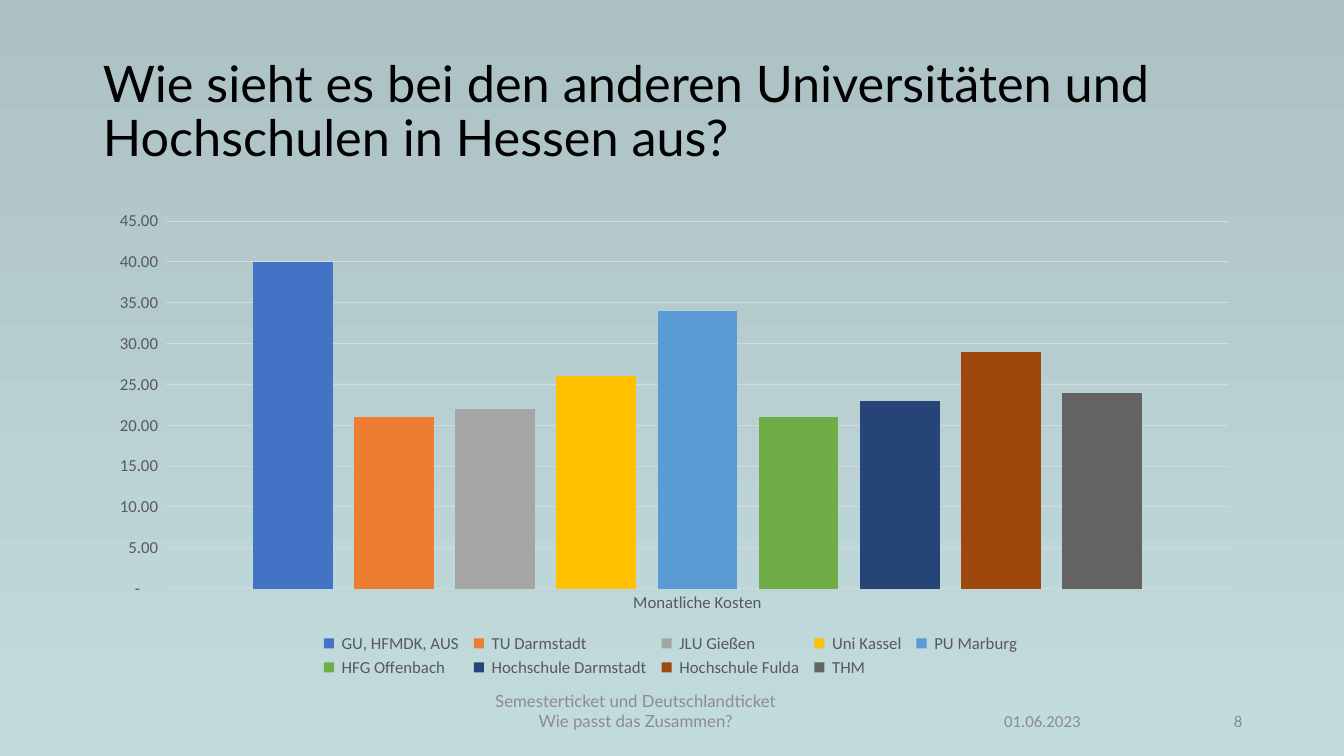
from dataclasses import dataclass

from pptx import Presentation
from pptx.chart.data import CategoryChartData
from pptx.dml.color import RGBColor as RGB
from pptx.enum.chart import XL_CHART_TYPE as Kind
from pptx.enum.chart import XL_LEGEND_POSITION as Place
from pptx.enum.chart import XL_TICK_MARK as Tick
from pptx.enum.text import MSO_ANCHOR as Anchor
from pptx.enum.text import MSO_AUTO_SIZE as Fit
from pptx.enum.text import PP_ALIGN as Align
from pptx.util import Inches, Pt


@dataclass(frozen=True)
class Theme:
    head: str = "Lato"
    body: str = "Calibri"
    large: int = 36
    small: int = 12
    black: str = "000000"
    label: str = "595959"
    muted: str = "8C8C8C"
    grid: str = "D9D9D9"
    sky: tuple = ("ACC1C4", "C2DCDD")


THEME = Theme()

COSTS = [
    (" GU, HFMDK, AUS ", 40, "4472C4"),
    (" TU Darmstadt ", 21, "ED7D31"),
    (" JLU Gießen ", 22, "A5A5A5"),
    (" Uni Kassel ", 26, "FFC000"),
    (" PU Marburg ", 34, "5B9BD5"),
    (" HFG Offenbach ", 21, "70AD47"),
    (" Hochschule Darmstadt ", 23, "264478"),
    (" Hochschule Fulda ", 29, "9E480E"),
    (" THM ", 24, "636363"),
]


def style(font, name, size, color):
    font.name = name
    font.size = Pt(size)
    font.color.rgb = RGB.from_string(color)


def rule(line):
    line.color.rgb = RGB.from_string(THEME.grid)
    line.width = Pt(0.75)


def write(frame, lines, align, name, size, color):
    frame.word_wrap = True
    frame.auto_size = Fit.NONE
    frame.vertical_anchor = Anchor.MIDDLE
    for spot, line in enumerate(lines):
        para = frame.add_paragraph() if spot else frame.paragraphs[0]
        para.alignment = align
        run = para.add_run()
        run.text = line
        style(run.font, name, size, color)


def paint(slide):
    fill = slide.background.fill
    fill.gradient()
    fill.gradient_angle = 270
    for stop, color, place in zip(fill.gradient_stops, THEME.sky, (0, 1)):
        stop.color.rgb = RGB.from_string(color)
        stop.position = place


def add_title(slide, left, top, width, height):
    title = slide.shapes.title
    title.left, title.top = Inches(left), Inches(top)
    title.width, title.height = Inches(width), Inches(height)
    text = "Wie sieht es bei den anderen Universitäten und Hochschulen in Hessen aus?"
    write(title.text_frame, [text], Align.LEFT, THEME.head, THEME.large, THEME.black)
    title.text_frame.paragraphs[0].line_spacing = 0.9


def add_costs(slide, left, top, width, height):
    data = CategoryChartData(number_format="0.00")
    data.categories = [" Monatliche Kosten "]
    for name, cost, _ in COSTS:
        data.add_series(name, [cost])
    box = [Inches(size) for size in (left, top, width, height)]
    chart = slide.shapes.add_chart(Kind.COLUMN_CLUSTERED, *box, data).chart
    style(chart.font, THEME.body, THEME.small, THEME.label)
    chart.has_title = False

    chart.has_legend = True
    chart.legend.position = Place.BOTTOM
    chart.legend.include_in_layout = False
    style(chart.legend.font, THEME.body, THEME.small, THEME.label)

    plot = chart.plots[0]
    plot.gap_width, plot.overlap = 219, -27
    plot.vary_by_categories = False
    for bar, (_, _, color) in zip(plot.series, COSTS):
        bar.format.fill.solid()
        bar.format.fill.fore_color.rgb = RGB.from_string(color)
        bar.invert_if_negative = False

    for axis in (chart.category_axis, chart.value_axis):
        axis.major_tick_mark = axis.minor_tick_mark = Tick.NONE
        style(axis.tick_labels.font, THEME.body, THEME.small, THEME.label)
    rule(chart.category_axis.format.line)
    scale = chart.value_axis
    scale.minimum_scale, scale.maximum_scale, scale.major_unit = 0, 45, 5
    scale.format.line.fill.background()
    scale.has_major_gridlines = True
    rule(scale.major_gridlines.format.line)
    scale.tick_labels.number_format = (
        r'_(* #,##0.00_);_(* \(#,##0.00\);_(* "-"??_);_(@_)'
    )
    scale.tick_labels.number_format_is_linked = False


def add_foot(slide, left, top, width, height):
    theme = ["Semesterticket und Deutschlandticket", "Wie passt das Zusammen?"]
    parts = [
        (0, -0.1, 6.43, theme, Align.CENTER, THEME.head),
        (6.77, 0, 1.31, ["01.06.2023"], Align.LEFT, THEME.body),
        (width - 0.91, 0, 0.91, ["8"], Align.RIGHT, THEME.body),
    ]
    for shift, lift, wide, lines, align, name in parts:
        box = slide.shapes.add_textbox(
            Inches(left + shift), Inches(top + lift), Inches(wide), Inches(height)
        )
        write(box.text_frame, lines, align, name, THEME.small, THEME.muted)


def main():
    deck = Presentation()
    deck.slide_width, deck.slide_height = Inches(13.33), Inches(7.5)
    slide = deck.slides.add_slide(deck.slide_layouts.get_by_name("Title Only"))
    paint(slide)
    add_title(slide, 0.92, 0.4, 11.5, 1.45)
    add_costs(slide, 0.92, 2, 11.5, 4.76)
    add_foot(slide, 3.09, 6.95, 9.33, 0.4)
    deck.save("out.pptx")


if __name__ == "__main__":
    main()
